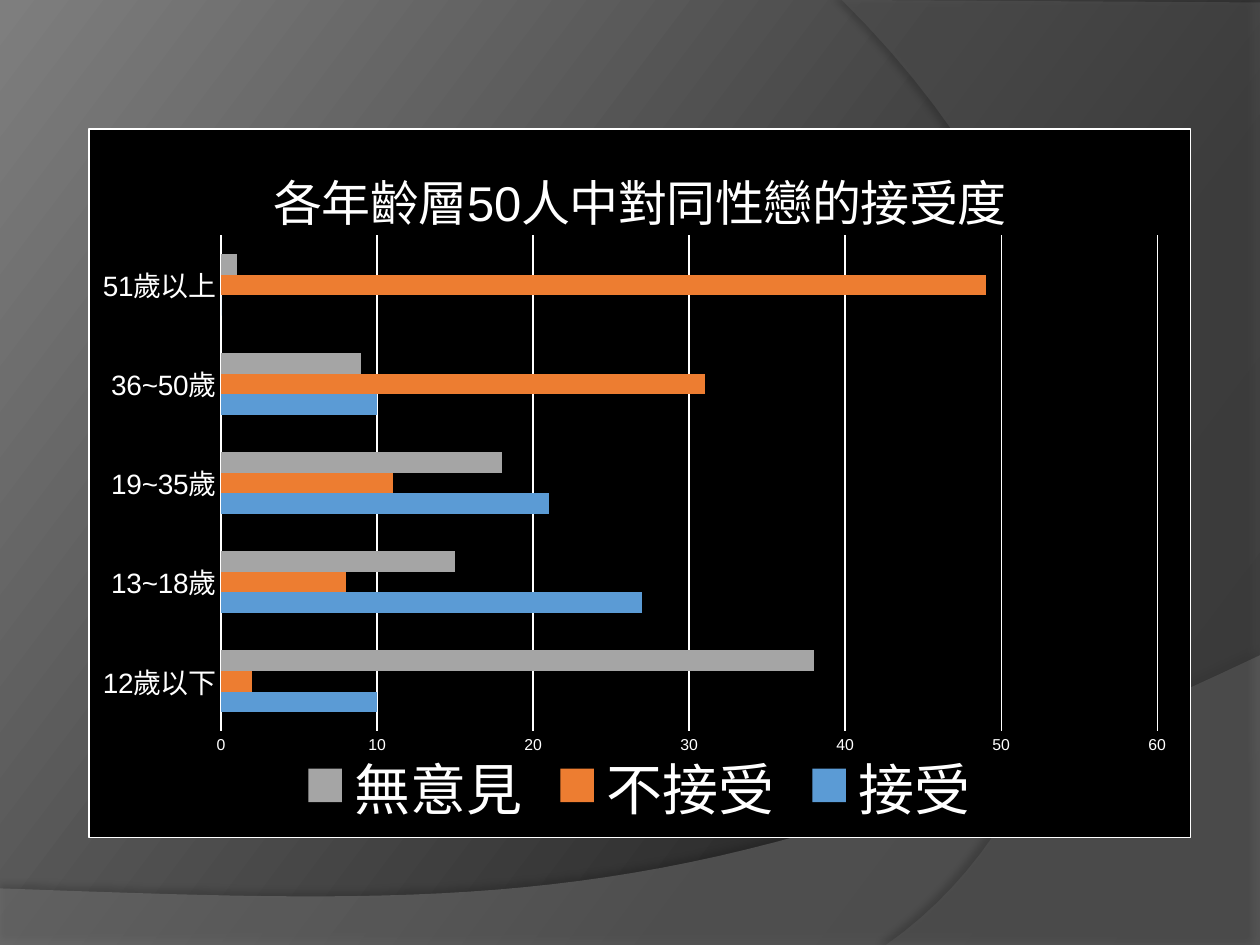
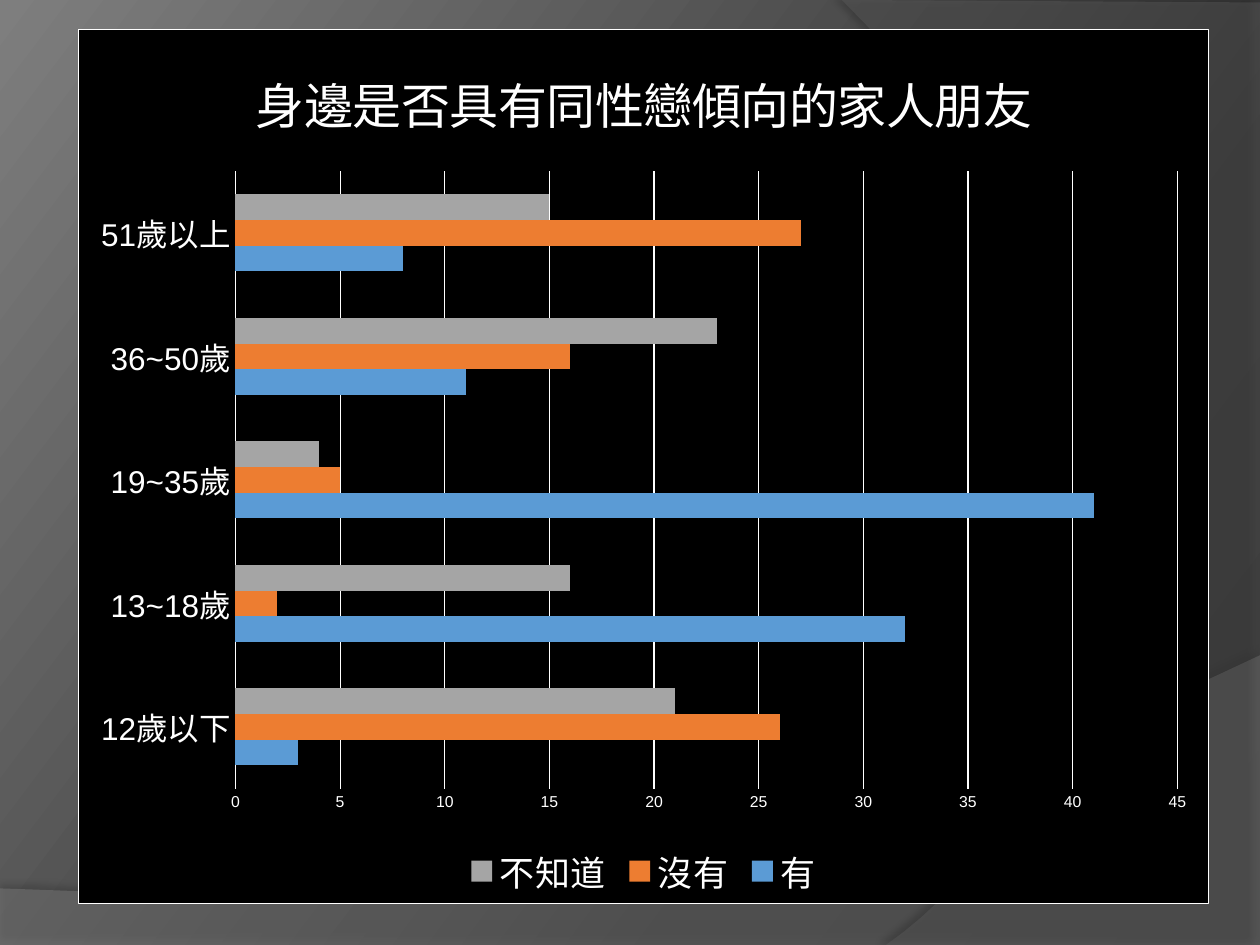
from copy import deepcopy

from lxml import etree
from pptx import Presentation
from pptx.chart.data import CategoryChartData
from pptx.dml.color import RGBColor
from pptx.enum.chart import XL_CHART_TYPE as ChartType, XL_LEGEND_POSITION as LegendSpot
from pptx.enum.chart import XL_TICK_MARK as TickMark
from pptx.oxml import parse_xml
from pptx.oxml.ns import nsdecls, qn
from pptx.util import Cm, Pt

COLOURS = {
    "dark": "282828", "charcoal": "2F2F2F", "light": "7E7E7E",
    "floor": "7F7F7F", "side": "5E5E5E",
    "black": "000000", "white": "FFFFFF",
    "blue": "5B9BD5", "orange": "ED7D31", "grey": "A5A5A5",
}
FONT = "Arial"
AGES = ["12歲以下", "13~18歲", "19~35歲", "36~50歲", "51歲以上"]
SERIES_COLOURS = ["blue", "orange", "grey"]

# Sweeps in cm: a curve (start, two controls, end) closed by straight corners.
SWEEPS = [
    {"curve": [(25.4, 13.21), (14.2, 18.52), (9.93, 18.26), (0, 17.91)],
     "corners": [(0, 19.05), (25.4, 19.05)],
     "fill": "floor", "alpha": 45, "shadow": (35, 4, 3.5, 270)},
    {"curve": [(17.86, 19.05), (22.63, 15.72), (24.05, 6.99), (16.97, 0)],
     "corners": [(25.4, 0.05), (25.4, 19.05)],
     "fill": "side", "alpha": 40, "shadow": (45, 4, 4, 180)},
]

CHARTS = [
    {"title": "各年齡層50人中對同性戀的接受度",
     "place": (1.78, 2.59, 22.23, 14.3),
     "series": {"接受": [10, 27, 21, 10, 0],
                "不接受": [2, 8, 11, 31, 49],
                "無意見": [38, 15, 18, 9, 1]},
     "age_size": 16, "legend_size": 32, "top": 60, "step": 10,
     "plot": {"x": 0.12, "y": 0.15, "w": 0.85, "h": 0.7}},
    {"title": "身邊是否具有同性戀傾向的家人朋友",
     "place": (1.57, 0.58, 22.81, 17.65),
     "series": {"有": [3, 32, 41, 11, 8],
                "沒有": [26, 2, 5, 16, 27],
                "不知道": [21, 16, 4, 23, 15]},
     "age_size": 18, "legend_size": 20, "top": 45, "step": 5,
     "plot": None},
]


def rgb(name):
    return RGBColor.from_string(COLOURS[name])


def style_font(font, size):
    font.name = FONT
    font.size = Pt(size)
    font.bold = False
    font.color.rgb = rgb("white")


deck = Presentation()
deck.slide_width, deck.slide_height = Cm(25.4), Cm(19.05)

# Shared background gradient
master = deck.slide_master
backdrop = master.background.fill
backdrop.gradient()
backdrop.gradient_angle = 360 - 217
stop_list = master.element.find(".//" + qn("p:bg")).find(".//" + qn("a:gsLst"))
stop_list.insert(1, deepcopy(stop_list[0]))
stops = [("dark", 0), ("charcoal", 0.3), ("light", 1)]
for stop, (name, position) in zip(backdrop.gradient_stops, stops):
    stop.color.rgb = rgb(name)
    stop.position = position

for details in CHARTS:
    page = deck.slides.add_slide(deck.slide_layouts[6])

    for sweep in SWEEPS:
        start, pull_a, pull_b, end = sweep["curve"]
        points = []
        for t in [i / 40 for i in range(41)]:
            u = 1 - t
            weights = (u ** 3, 3 * u * u * t, 3 * u * t * t, t ** 3)
            points.append([Cm(sum(w * p[axis] for w, p in zip(weights, sweep["curve"])))
                           for axis in (0, 1)])
        points += [(Cm(x), Cm(y)) for x, y in sweep["corners"]]
        outline = page.shapes.build_freeform(*points[0])
        outline.add_line_segments(points[1:], close=True)
        shape = outline.convert_to_shape()
        shape.fill.solid()
        shape.fill.fore_color.rgb = rgb(sweep["fill"])
        shape.line.fill.background()
        shape.shadow.inherit = False
        properties = shape.element.spPr
        fill_colour = properties.find(qn("a:solidFill"))[0]
        etree.SubElement(fill_colour, qn("a:alpha"), val=str(sweep["alpha"] * 1000))
        opacity, blur, distance, angle = sweep["shadow"]
        properties.find(qn("a:effectLst")).append(parse_xml(
            f'<a:outerShdw {nsdecls("a")} blurRad="{Pt(blur)}" dist="{Pt(distance)}" '
            f'dir="{angle * 60000}" algn="ctr" rotWithShape="0">'
            f'<a:srgbClr val="{COLOURS["black"]}"><a:alpha val="{opacity * 1000}"/>'
            '</a:srgbClr></a:outerShdw>'))

    data = CategoryChartData()
    data.categories = AGES
    for name, values in details["series"].items():
        data.add_series(name, values)
    place = [Cm(length) for length in details["place"]]
    chart = page.shapes.add_chart(ChartType.BAR_CLUSTERED, *place, data).chart
    style_font(chart.font, 10)

    chart.has_title = True
    title = chart.chart_title
    title.include_in_layout = False
    title.text_frame.text = details["title"]
    style_font(title.text_frame.paragraphs[0].runs[0].font, 28)

    chart.has_legend = True
    chart.legend.position = LegendSpot.BOTTOM
    chart.legend.include_in_layout = False
    style_font(chart.legend.font, details["legend_size"])

    ages, counts = chart.category_axis, chart.value_axis
    for axis, size in ((ages, details["age_size"]), (counts, 9)):
        axis.major_tick_mark = axis.minor_tick_mark = TickMark.NONE
        style_font(axis.tick_labels.font, size)
    counts.minimum_scale, counts.maximum_scale = 0, details["top"]
    counts.major_unit = details["step"]
    counts.has_major_gridlines = True
    counts.format.line.fill.background()
    for line in (ages.format.line, counts.major_gridlines.format.line):
        line.color.rgb = rgb("white")
        line.width = Pt(0.75)

    bars = chart.plots[0]
    bars.gap_width, bars.overlap, bars.vary_by_categories = 182, 0, False
    for series, name in zip(bars.series, SERIES_COLOURS):
        series.format.fill.solid()
        series.format.fill.fore_color.rgb = rgb(name)
        series.invert_if_negative = False

    # Black panel with a thin white border
    chart_body = chart.element.find(qn("c:chart"))
    chart_body.addnext(parse_xml(
        f'<c:spPr {nsdecls("c", "a")}>'
        f'<a:solidFill><a:srgbClr val="{COLOURS["black"]}"/></a:solidFill>'
        f'<a:ln w="{Pt(0.75)}"><a:solidFill><a:srgbClr val="{COLOURS["white"]}"/>'
        '</a:solidFill></a:ln></c:spPr>'))

    if details["plot"]:
        plot_area = chart_body.find(qn("c:plotArea"))
        for old_layout in plot_area.findall(qn("c:layout")):
            plot_area.remove(old_layout)
        modes = '<c:xMode val="edge"/><c:yMode val="edge"/>'
        sizes = "".join(f'<c:{key} val="{value}"/>' for key, value in details["plot"].items())
        plot_area.insert(0, parse_xml(
            f'<c:layout {nsdecls("c")}><c:manualLayout><c:layoutTarget val="inner"/>'
            f'{modes}{sizes}</c:manualLayout></c:layout>'))

deck.save("out.pptx")
